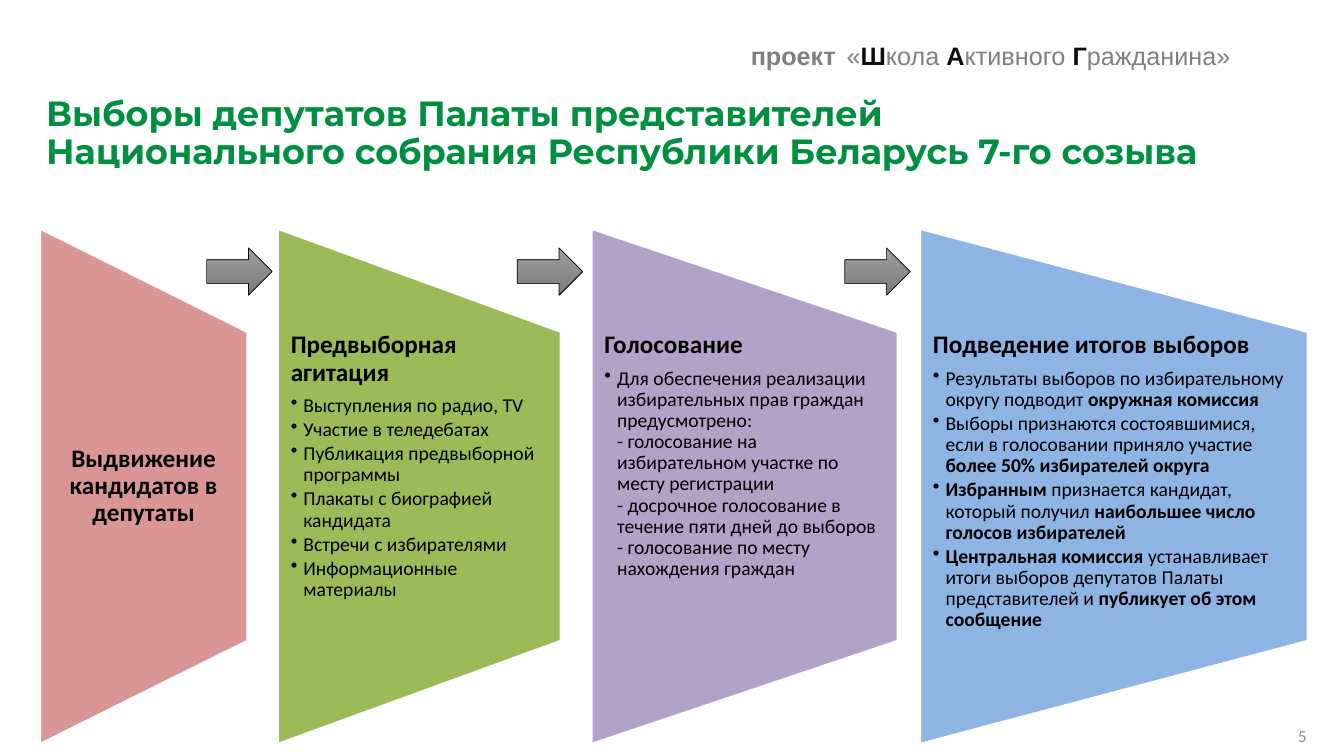
from lxml.etree import SubElement
from pptx import Presentation
from pptx.dml.color import RGBColor
from pptx.enum.shapes import MSO_SHAPE as Preset
from pptx.enum.text import MSO_ANCHOR as Anchor, PP_ALIGN as Align
from pptx.oxml.ns import qn
from pptx.util import Pt


def rgb(value):
    return RGBColor.from_string(value)


def apply(target, values):
    for name, value in values.items():
        setattr(target, name, value)


class StageSlide:
    heading = {"size": Pt(18), "bold": True}
    body = {"size": Pt(14), "bold": False}
    panel_middle, panel_height = 347.4, 367.2

    def __init__(self, slide):
        self.shapes = slide.shapes

    def box(self, left, top, width, height, **frame_format):
        frame = self.shapes.add_textbox(Pt(left), Pt(top), Pt(width), Pt(height)).text_frame
        apply(frame, {"word_wrap": True, **frame_format})
        return frame

    def add_text(self, paragraph, text, color="000000", name="Calibri", **font_format):
        """Add text to the paragraph, with a line break at each newline."""
        for number, line in enumerate(text.split("\n")):
            if number:
                paragraph.add_line_break()
            run = paragraph.add_run()
            run.text = line
            apply(run.font, {"name": name, **font_format})
            run.font.color.rgb = rgb(color)

    def bullet(self, paragraph, text):
        """Fill in a bulleted item in which ** switches bold on and off."""
        properties = paragraph._p.get_or_add_pPr()
        apply(paragraph, {"level": 1, "line_spacing": 0.9, "space_after": Pt(2.1)})
        properties.set("marL", str(Pt(9)))
        properties.set("indent", str(Pt(-9)))
        SubElement(properties, qn("a:buChar")).set("char", "•")
        for number, part in enumerate(text.split("**")):
            if part:
                self.add_text(paragraph, part, **{**self.body, "bold": number % 2 == 1})

    def preset(self, kind, left, top, width, height, line, line_width):
        shape = self.shapes.add_shape(kind, Pt(left), Pt(top), Pt(width), Pt(height))
        shape.shadow.inherit = False
        shape.line.color.rgb = rgb(line)
        shape.line.width = Pt(line_width)
        return shape

    def stage(self, left, width, fill, title, items):
        # The preset lies on its side, so its width is the panel's height.
        panel = self.preset(Preset.FLOWCHART_MANUAL_OPERATION,
                            left + (width - self.panel_height) / 2,
                            self.panel_middle - width / 2,
                            self.panel_height, width, "FFFFFF", 1)
        panel.rotation = 270
        panel.fill.solid()
        panel.fill.fore_color.rgb = rgb(fill)

        frame = self.box(left, 237.2, width, 220.3,
                         margin_left=Pt(9), margin_right=Pt(9), margin_top=0, margin_bottom=0,
                         vertical_anchor=Anchor.TOP if items else Anchor.MIDDLE)
        caption = frame.paragraphs[0]
        apply(caption, {"line_spacing": 0.9, "space_after": Pt(6.3),
                        "alignment": Align.LEFT if items else Align.CENTER})
        self.add_text(caption, title, **self.heading)
        for item in items:
            self.bullet(frame.add_paragraph(), item)

    def arrow(self, left):
        arrow = self.preset(Preset.RIGHT_ARROW, left, 177.1, 46.8, 33.8, "000000", 0.5)
        arrow.fill.gradient()
        arrow.fill.gradient_angle = 270
        for stop, color in zip(arrow.fill.gradient_stops, ("9D9D9D", "7C7C7C")):
            stop.color.rgb = rgb(color)

    def project_name(self):
        line = self.box(529.2, 15.1, 360.7, 41, word_wrap=False).paragraphs[0]
        gray, dark = "808080", "0D0D0D"
        for text, color, size, bold in (
            ("проект", gray, 18, True), (" ", gray, 28, True), ("«", gray, 18, False),
            ("Ш", dark, 18, True), ("кола ", gray, 18, False),
            ("А", dark, 18, True), ("ктивного ", gray, 18, False),
            ("Г", dark, 18, True), ("ражданина»", gray, 18, False),
        ):
            self.add_text(line, text, color, "Arial", size=Pt(size), bold=bold)

    def title(self, text):
        paragraph = self.box(25.9, 71.3, 908.6, 49, vertical_anchor=Anchor.MIDDLE).paragraphs[0]
        paragraph.line_spacing = 0.9
        self.add_text(paragraph, text, "008E40", "Montserrat", size=Pt(25), bold=True)

    def page_number(self, number):
        paragraph = self.box(771.1, 513.4, 169.2, 23.8, vertical_anchor=Anchor.MIDDLE).paragraphs[0]
        paragraph.alignment = Align.RIGHT
        self.add_text(paragraph, number, "8C8C8C", size=Pt(12))


STAGES = [
    (28.8, 147.6, "D99694", "Выдвижение кандидатов в депутаты", []),
    (198.7, 201.6, "9BBB59", "Предвыборная агитация", [
        "Выступления по радио, TV",
        "Участие в теледебатах",
        "Публикация предвыборной программы",
        "Плакаты с биографией кандидата",
        "Встречи с избирателями",
        "Информационные материалы",
    ]),
    (422.8, 218.2, "B3A2C7", "Голосование", [
        "Для обеспечения реализации избирательных прав граждан предусмотрено:\n"
        "- голосование на избирательном участке по месту регистрации\n"
        "- досрочное голосование в течение пяти дней до выборов\n"
        "- голосование по месту нахождения граждан",
    ]),
    (657.4, 276.5, "8EB4E3", "Подведение итогов выборов", [
        "Результаты выборов по избирательному округу подводит **окружная комиссия**",
        "Выборы признаются состоявшимися, если в голосовании приняло участие "
        "**более 50% избирателей округа**",
        "**Избранным** признается кандидат, который получил "
        "**наибольшее число голосов избирателей**",
        "**Центральная комиссия** устанавливает итоги выборов депутатов Палаты "
        "представителей и **публикует об этом сообщение**",
    ]),
]


def main():
    deck = Presentation()
    apply(deck, {"slide_width": Pt(960), "slide_height": Pt(540)})
    slide = StageSlide(deck.slides.add_slide(deck.slide_layouts[6]))
    slide.project_name()
    slide.page_number("5")
    for stage in STAGES:
        slide.stage(*stage)
    for left in (147.6, 369.4, 603.4):
        slide.arrow(left)
    slide.title("Выборы депутатов Палаты представителей\n"
                "Национального собрания Республики Беларусь 7-го созыва")
    deck.save("out.pptx")


if __name__ == "__main__":
    main()
